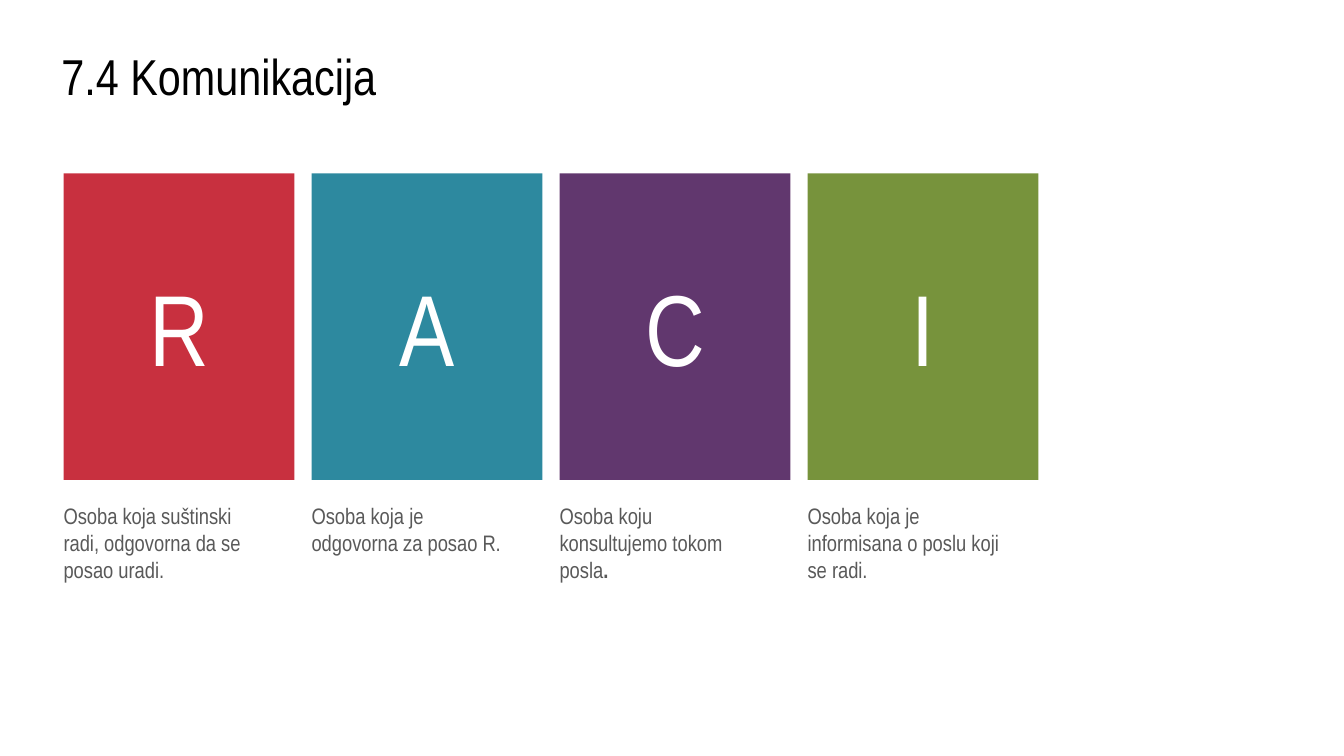
from dataclasses import dataclass

from pptx import Presentation
from pptx.dml.color import RGBColor
from pptx.enum.shapes import MSO_SHAPE
from pptx.enum.text import MSO_ANCHOR as Anchor, PP_ALIGN as Align
from pptx.slide import Slide
from pptx.text.text import TextFrame, _Paragraph as Paragraph
from pptx.util import Inches, Pt

FONT = "Arial Narrow"
COLORS = {
    "title": "000000",
    "caption": "595959",
    "letter": "FFFFFF",
    "responsible": "C8303F",
    "accountable": "2D899F",
    "consulted": "61376E",
    "informed": "77933C",
}
FIRST_LEFT, PITCH, CARD_WIDTH = 0.63, 2.46, 2.29
CARD_TOP, CARD_HEIGHT = 1.72, 3.04
CAPTION_TOP, CAPTION_HEIGHT = 4.98, 1.38


@dataclass(frozen=True)
class Role:
    letter: str
    color: str
    caption: str
    bold_ending: str = ""


ROLES = [
    Role("R", "responsible", "Osoba koja suštinski radi, odgovorna da se posao uradi."),
    Role("A", "accountable", "Osoba koja je odgovorna za posao R."),
    Role("C", "consulted", "Osoba koju konsultujemo tokom posla", "."),
    Role("I", "informed", "Osoba koja je informisana o poslu koji se radi."),
]


def add_run(paragraph: Paragraph, text: str, size: int, color: str, bold: bool = False) -> None:
    run = paragraph.add_run()
    run.text = text
    run.font.name = FONT
    run.font.size = Pt(size)
    run.font.bold = bold
    run.font.color.rgb = RGBColor.from_string(COLORS[color])


def add_text_area(slide: Slide, left: float, top: float, width: float, height: float,
                  right_inset: float = 0, bottom_inset: float = 0) -> TextFrame:
    """Add a wrapping, top-anchored text box with no left or top inset."""
    box = slide.shapes.add_textbox(Inches(left), Inches(top), Inches(width), Inches(height))
    frame = box.text_frame
    frame.word_wrap = True
    frame.vertical_anchor = Anchor.TOP
    frame.margin_left = frame.margin_top = 0
    frame.margin_right = Inches(right_inset)
    frame.margin_bottom = Inches(bottom_inset)
    return frame


def add_card(slide: Slide, role: Role, left: float) -> None:
    card = slide.shapes.add_shape(MSO_SHAPE.RECTANGLE, Inches(left), Inches(CARD_TOP),
                                  Inches(CARD_WIDTH), Inches(CARD_HEIGHT))
    card.shadow.inherit = False
    card.fill.solid()
    card.fill.fore_color.rgb = RGBColor.from_string(COLORS[role.color])
    card.line.fill.background()
    card.text_frame.vertical_anchor = Anchor.MIDDLE
    letter = card.text_frame.paragraphs[0]
    letter.alignment = Align.CENTER
    add_run(letter, role.letter, 72, "letter")


def add_caption(slide: Slide, role: Role, left: float) -> None:
    frame = add_text_area(slide, left, CAPTION_TOP, CARD_WIDTH, CAPTION_HEIGHT, 0.28, 0.12)
    caption = frame.paragraphs[0]
    caption.space_after = Pt(8)
    add_run(caption, role.caption, 16, "caption")
    if role.bold_ending:
        add_run(caption, role.bold_ending, 16, "caption", bold=True)


def main() -> None:
    deck = Presentation()
    deck.slide_width, deck.slide_height = Inches(13.33), Inches(7.5)
    slide = deck.slides.add_slide(deck.slide_layouts[6])

    title = add_text_area(slide, 0.61, 0.45, 12.13, 1.17)
    add_run(title.paragraphs[0], "7.4 Komunikacija", 36, "title")

    for index, role in enumerate(ROLES):
        left = FIRST_LEFT + index * PITCH
        add_card(slide, role, left)
        add_caption(slide, role, left)

    deck.save("out.pptx")


if __name__ == "__main__":
    main()
